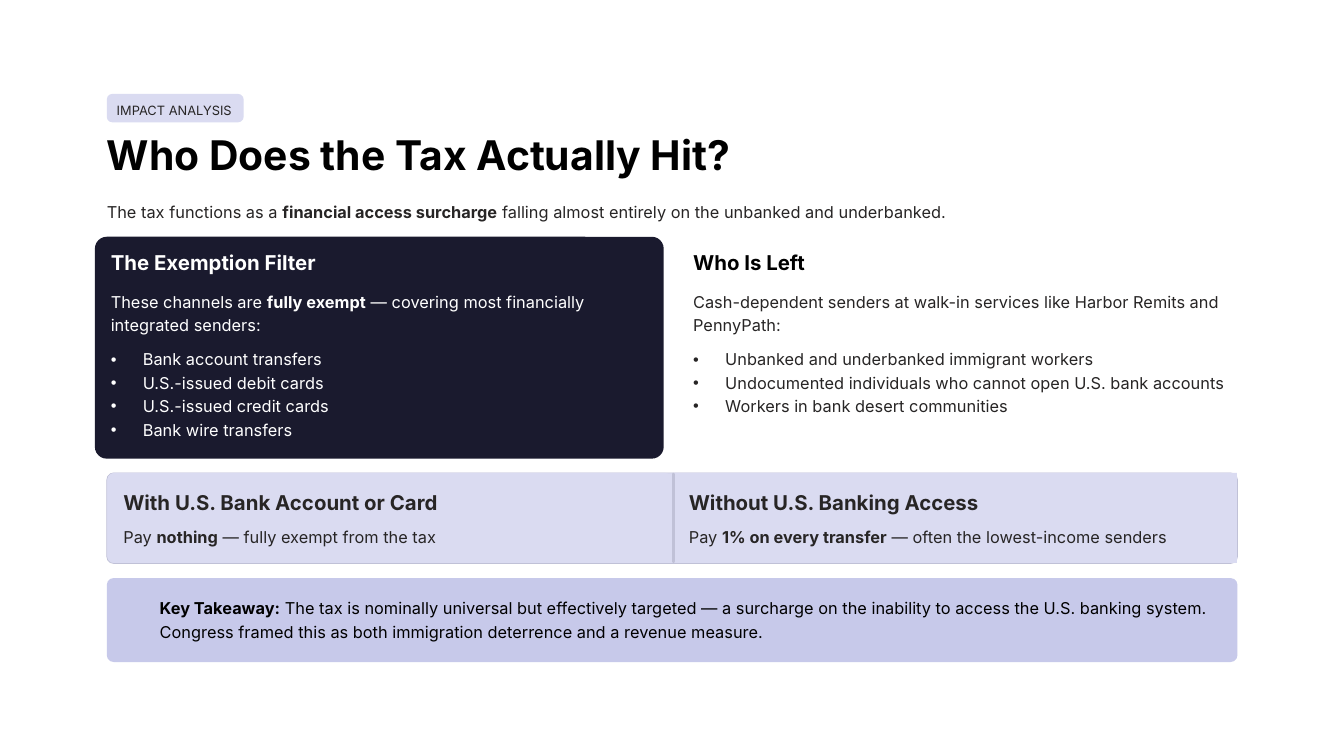
from lxml.etree import SubElement
from pptx import Presentation
from pptx.dml.color import RGBColor
from pptx.enum.shapes import MSO_SHAPE
from pptx.enum.text import MSO_ANCHOR, MSO_AUTO_SIZE, PP_ALIGN
from pptx.oxml.ns import qn
from pptx.util import Cm, Pt

FONT = "Inter"
BLACK, INK, WHITE = "000000", "272525", "FFFFFF"
NAVY, LILAC, PERIWINKLE, RULE = "1A1A2E", "DADBF1", "C7C9EA", "C0C1D7"

BADGE = "IMPACT ANALYSIS"
TITLE = "**Who Does the Tax Actually Hit?**"
LEAD = ("The tax functions as a **financial access surcharge** falling almost "
        "entirely on the unbanked and underbanked.")
COLUMNS = [
    dict(x=3.35, w=16.2, head="**The Exemption Filter**", head_w=6.22,
         head_color=WHITE, color=WHITE, list_h=3.25,
         intro="These channels are **fully exempt** — covering most "
               "financially integrated senders:",
         items=["Bank account transfers", "U.S.-issued debit cards",
                "U.S.-issued credit cards", "Bank wire transfers"]),
    dict(x=20.96, w=16.48, head="**Who Is Left**", head_w=6.2,
         head_color=BLACK, color=INK, list_h=2.39,
         intro="Cash-dependent senders at walk-in services like Harbor "
               "Remits and PennyPath:",
         items=["Unbanked and underbanked immigrant workers",
                "Undocumented individuals who cannot open U.S. bank accounts",
                "Workers in bank desert communities"]),
]
COMPARISON = [
    (3.73, "**With U.S. Bank Account or Card**", 9.53,
     "Pay **nothing** — fully exempt from the tax"),
    (20.83, "**Without U.S. Banking Access**", 8.79,
     "Pay **1% on every transfer** — often the lowest-income senders"),
]
TAKEAWAY = ("**Key Takeaway:** The tax is nominally universal but effectively "
            "targeted — a surcharge on the inability to access the U.S. "
            "banking system. Congress framed this as both immigration "
            "deterrence and a revenue measure.")

LEFT, WIDTH = 3.23, 34.19
MIDDLE = LEFT + WIDTH / 2
BAND_Y, BAND_H = 14.3, 2.74
INDENT = 0.97


def rgb(value):
    return RGBColor.from_string(value)


def place(sp, x, y, w, h):
    sp.left, sp.top, sp.width, sp.height = Cm(x), Cm(y), Cm(w), Cm(h)


def panel(s, x, y, w, h, fill, radius=0, line=None):
    kind = MSO_SHAPE.ROUNDED_RECTANGLE if radius else MSO_SHAPE.RECTANGLE
    sp = s.shapes.add_shape(kind, Cm(x), Cm(y), Cm(w), Cm(h))
    if radius:
        sp.adjustments[0] = radius / min(w, h)
    sp.shadow.inherit = False
    sp.fill.solid()
    sp.fill.fore_color.rgb = rgb(fill)
    if line:
        sp.line.color.rgb = rgb(line)
        sp.line.width = Pt(0.6)
    else:
        sp.line.fill.background()


def add_bullet(p):
    pPr = p._p.get_or_add_pPr()
    pPr.set("marL", str(Cm(INDENT)))
    pPr.set("indent", str(-Cm(INDENT)))
    SubElement(pPr, qn("a:buChar")).set("char", "•")


def write(sp, paragraphs, size, color, spacing, wrap=True, bullets=False):
    tf = sp.text_frame
    tf.margin_left = tf.margin_top = tf.margin_right = tf.margin_bottom = 0
    tf.auto_size = MSO_AUTO_SIZE.NONE
    tf.vertical_anchor = MSO_ANCHOR.TOP
    tf.word_wrap = wrap
    for i, text in enumerate(paragraphs):
        p = tf.add_paragraph() if i else tf.paragraphs[0]
        if bullets:
            add_bullet(p)
        p.alignment = PP_ALIGN.LEFT
        p.line_spacing = Pt(spacing)
        p.space_before = p.space_after = Pt(0)
        for j, part in enumerate(text.split("**")):
            if part:
                r = p.add_run()
                r.text = part
                r.font.name = FONT
                r.font.size = Pt(size)
                r.font.bold = j % 2 == 1
                r.font.color.rgb = rgb(color)


def label(s, x, y, w, h, text, size=14, color=INK, spacing=20, wrap=False):
    sp = s.shapes.add_textbox(Cm(x), Cm(y), Cm(w), Cm(h))
    write(sp, [text], size, color, spacing, wrap)


def heading(s, x, y, w, text, color=INK):
    label(s, x, y, w, 0.76, text, 17.5, color, 21.5)


def main():
    prs = Presentation()
    prs.slide_width, prs.slide_height = Cm(40.64), Cm(22.86)
    s = prs.slides.add_slide(prs.slide_layouts[3])
    title, *lists = s.placeholders

    panel(s, LEFT, 2.84, 4.14, 0.86, LILAC, 0.17)
    label(s, 3.53, 3, 3.56, 0.56, BADGE, 11, INK, 16)
    place(title, LEFT, 3.86, 18.92, 1.55)
    write(title, [TITLE], 35, BLACK, 43.5, wrap=False)
    label(s, LEFT, 5.99, WIDTH, 0.71, LEAD)

    panel(s, 2.87, 7.16, 17.2, 6.71, NAVY, 0.36)
    for col, body in zip(COLUMNS, lists):
        x, w = col["x"], col["w"]
        heading(s, x, 7.54, col["head_w"], col["head"], col["head_color"])
        label(s, x, 8.71, w, 1.42, col["intro"], color=col["color"], wrap=True)
        place(body, x, 10.46, w, col["list_h"])
        write(body, col["items"], 14, col["color"], 20, bullets=True)
        s.shapes.element.append(body.element)

    panel(s, LEFT, BAND_Y, WIDTH, BAND_H, LILAC, 0.21, RULE)
    half = WIDTH / 2 - 0.02
    panel(s, MIDDLE - half, BAND_Y, half, BAND_H - 0.02, LILAC, 0.21)
    panel(s, MIDDLE, BAND_Y, half, BAND_H - 0.02, LILAC)
    panel(s, MIDDLE, BAND_Y, 0.08, BAND_H - 0.02, RULE, 0.04)
    for x, head, head_w, text in COMPARISON:
        heading(s, x, 14.81, head_w, head)
        label(s, x, 15.82, 16.08, 0.71, text)

    panel(s, LEFT, 17.48, WIDTH, 2.54, PERIWINKLE, 0.21)
    label(s, 4.83, 17.98, 32.08, 1.42, TAKEAWAY, color=BLACK, wrap=True)
    prs.save("out.pptx")


if __name__ == "__main__":
    main()
